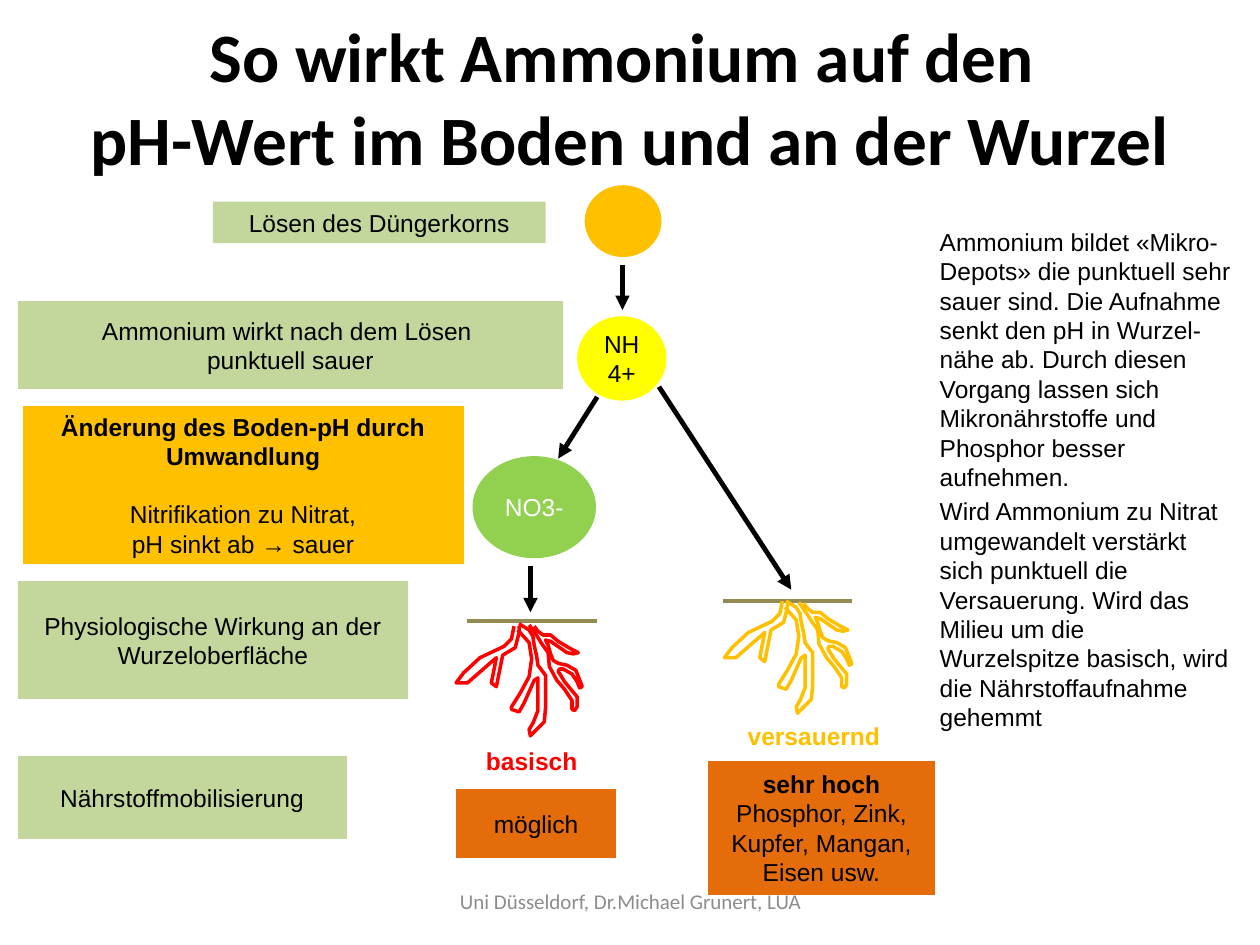
from lxml import etree
from pptx import Presentation
from pptx import util as u
from pptx.dml.color import RGBColor
from pptx.enum import shapes, text
from pptx.oxml.ns import qn

PX = 9144  # 100 px to the inch
COLORS = {
    "black": "000000", "white": "FFFFFF", "sage": "C3D69B", "amber": "FFC000",
    "yellow": "FFFF00", "green": "92D050", "orange": "E46C0A", "soil": "948A54",
    "red": "FF0000", "grey": "8C8C8C",
}
COLORS = {name: RGBColor.from_string(value) for name, value in COLORS.items()}

presentation = Presentation()
presentation.slide_width = 1000 * PX
presentation.slide_height = 750 * PX
slide = presentation.slides.add_slide(presentation.slide_layouts[6])


def write(shape, paragraphs, color="black", size=14, font="Arial", bold=False,
          align=text.PP_ALIGN.CENTER, anchor=text.MSO_ANCHOR.MIDDLE):
    frame = shape.text_frame
    frame.word_wrap = True
    frame.vertical_anchor = anchor
    frame.text = "\n".join(paragraphs)
    for paragraph in frame.paragraphs:
        paragraph.alignment = align
        paragraph.font.name = font
        paragraph.font.size = u.Pt(size)
        paragraph.font.bold = bold
        paragraph.font.color.rgb = COLORS[color]
    return frame


def add_line(x1, y1, x2, y2, color, width, arrow=False):
    line = slide.shapes.add_connector(
        shapes.MSO_CONNECTOR.STRAIGHT, x1 * PX, y1 * PX, x2 * PX, y2 * PX)
    line.line.color.rgb = COLORS[color]
    line.line.width = u.Pt(width)
    if arrow:
        etree.SubElement(line.line._get_or_add_ln(), qn("a:tailEnd"), type="triangle")
    etree.SubElement(line._element.spPr, qn("a:effectLst"))


# Title and explanation
title = slide.shapes.add_textbox(50 * PX, 14 * PX, 900 * PX, 125 * PX)
write(title, ["So wirkt Ammonium auf den \vpH-Wert im Boden und an der Wurzel"],
      size=39.6, font="Calibri", bold=True)

explanation = slide.shapes.add_textbox(736 * PX, 175 * PX, 251 * PX, 495 * PX)
frame = write(explanation, [
    "Ammonium bildet «Mikro-Depots» die punktuell sehr sauer sind. Die Aufnahme "
    "senkt den pH in Wurzel-nähe ab. Durch diesen Vorgang lassen sich "
    "Mikronährstoffe und Phosphor besser aufnehmen.",
    "Wird Ammonium zu Nitrat umgewandelt verstärkt sich punktuell die Versauerung. "
    "Wird das Milieu um die Wurzelspitze basisch, wird die Nährstoffaufnahme gehemmt",
], align=text.PP_ALIGN.LEFT, anchor=text.MSO_ANCHOR.TOP)
for paragraph in frame.paragraphs:
    paragraph.space_before = u.Pt(2.8)

# Process boxes and ions
RECT = shapes.MSO_SHAPE.RECTANGLE
PROCESS = shapes.MSO_SHAPE.FLOWCHART_PROCESS
CIRCLE = shapes.MSO_SHAPE.FLOWCHART_CONNECTOR
nodes = [
    (RECT, 169, 160, 264, 33, "sage", "black", ["Lösen des Düngerkorns"]),
    (CIRCLE, 458, 251, 71, 67, "yellow", "black", ["NH4+"]),
    (PROCESS, 18, 322, 350, 126, "amber", "black",
     ["Änderung des Boden-pH durch Umwandlung",
      "Nitrifikation zu Nitrat,\vpH sinkt ab → sauer"]),
    (CIRCLE, 375, 362, 98, 81, "green", "white", ["NO3-"]),
    (PROCESS, 14, 239, 433, 70, "sage", "black",
     ["Ammonium wirkt nach dem Lösen \vpunktuell sauer"]),
    (PROCESS, 14, 461, 310, 94, "sage", "black",
     ["Physiologische Wirkung an der Wurzeloberfläche"]),
    (PROCESS, 14, 600, 261, 66, "sage", "black", ["Nährstoffmobilisierung"]),
    (CIRCLE, 464, 147, 61, 57, "amber", "black", []),
    (PROCESS, 362, 626, 127, 55, "orange", "black", ["möglich"]),
    (PROCESS, 562, 604, 180, 106, "orange", "black", ["sehr hoch "]),
]
for kind, left, top, width, height, fill, color, paragraphs in nodes:
    shape = slide.shapes.add_shape(kind, left * PX, top * PX, width * PX, height * PX)
    shape.shadow.inherit = False
    shape.fill.solid()
    shape.fill.fore_color.rgb = COLORS[fill]
    shape.line.fill.background()
    if paragraphs:
        frame = write(shape, paragraphs, color)
    if len(paragraphs) == 2:  # bold heading with a gap below
        frame.paragraphs[0].font.bold = True
        frame.paragraphs[1].space_before = u.Pt(16.5)

# The last box continues its bold lead-in with regular text
lead = frame.paragraphs[0]
lead.runs[0].font.bold = True
lead.add_run().text = "Phosphor, Zink, Kupfer, Mangan, Eisen usw."

# Arrows
for ends in [(494, 210, 494, 246), (474, 315, 443, 364),
             (421, 449, 421, 486), (523, 307, 628, 468)]:
    add_line(*ends, "black", 2.75, arrow=True)

# Soil surfaces
add_line(371, 493, 474, 493, "soil", 2.25)
add_line(574, 477, 676, 477, "soil", 2.25)

# Roots: three strands, each with its shift from the red to the amber root
left_strand = [
    (408, 497), (406, 507), (400, 513), (381, 522), (368, 534), (362, 542), (371, 542),
    (394, 522), (390, 542), (394, 545), (399, 520), (409, 514), (412, 502), (412, 497)]
middle_strand = [
    (411, 500), (420, 510), (422, 523), (420, 537), (413, 550), (406, 561), (406, 563),
    (412, 565), (416, 558), (424, 540), (427, 538), (427, 564), (423, 574), (420, 579),
    (421, 584), (432, 573), (433, 562), (433, 550), (433, 536), (427, 528), (426, 521),
    (424, 512), (423, 505), (420, 500), (412, 495)]
right_strand = [
    (420, 496), (427, 506), (430, 511), (435, 518), (436, 529), (442, 540), (448, 547),
    (454, 556), (454, 563), (456, 564), (458, 561), (458, 553), (453, 547), (448, 541),
    (445, 536), (443, 533), (444, 531), (447, 531), (454, 535), (458, 541), (460, 546),
    (462, 545), (461, 542), (457, 532), (450, 528), (445, 527), (442, 526), (439, 524),
    (437, 519), (435, 512), (433, 508), (437, 509), (450, 518), (455, 519), (459, 518),
    (453, 515), (443, 509), (437, 504), (431, 504), (427, 501), (424, 497)]
strands = [(left_strand, 213, -20), (middle_strand, 212, -18), (right_strand, 214, -18)]
for color, shifted, caption, left, top in [("red", 0, "basisch", 357, 586),
                                           ("amber", 1, "versauernd", 581, 566)]:
    for strand, shift_x, shift_y in strands:
        points = [(x + shifted * shift_x, y + shifted * shift_y) for x, y in strand]
        builder = slide.shapes.build_freeform(*points[0], scale=PX)
        builder.add_line_segments(points[1:], close=False)
        root = builder.convert_to_shape()
        root.shadow.inherit = False
        root.fill.background()
        root.line.color.rgb = COLORS[color]
        root.line.width = u.Pt(2)
    box = slide.shapes.add_textbox(left * PX, top * PX, 130 * PX, 36 * PX)
    write(box, [caption], color=color, bold=True)

# Footer
footer = slide.shapes.add_textbox(342 * PX, 695 * PX, 317 * PX, 40 * PX)
write(footer, ["Uni Düsseldorf, Dr.Michael Grunert, LUA"],
      color="grey", size=12, font="Calibri")

presentation.save("out.pptx")
